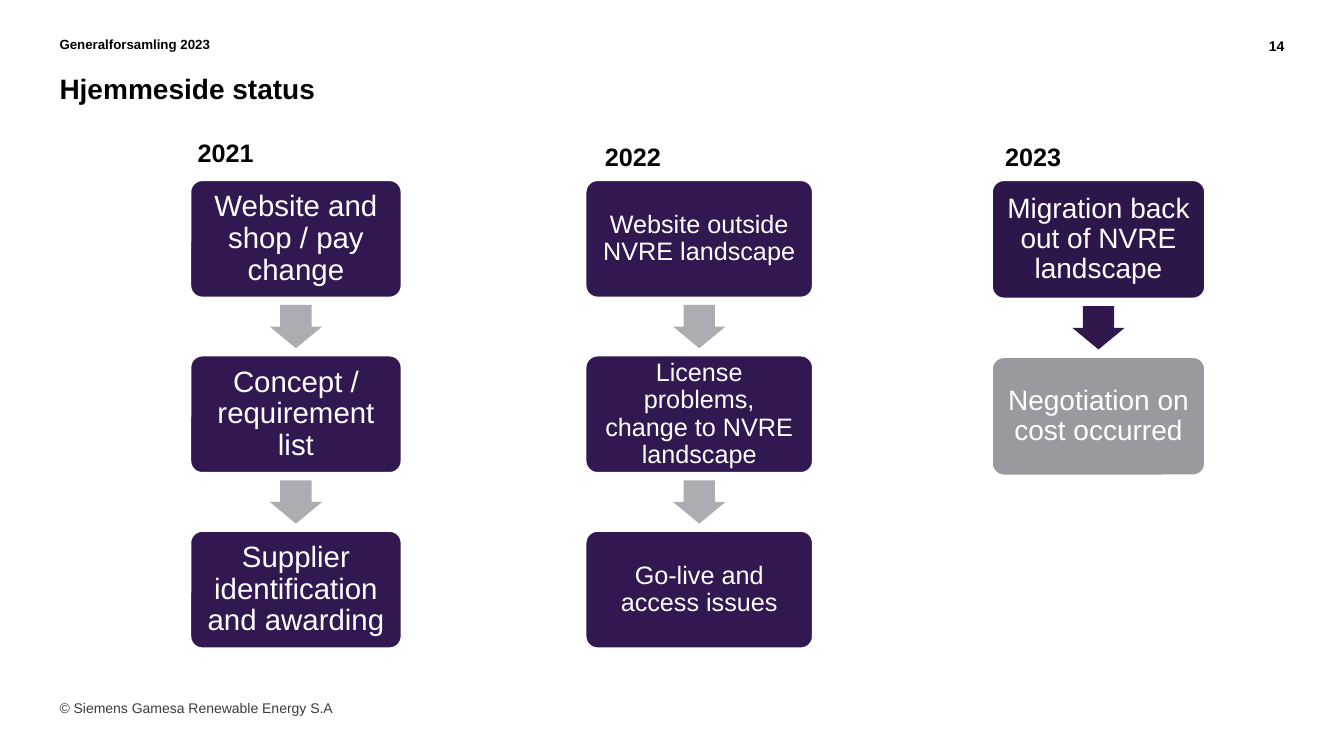
from pptx import Presentation
from pptx.dml.color import RGBColor
from pptx.enum.shapes import MSO_SHAPE as SHAPE
from pptx.enum.text import MSO_ANCHOR as ANCHOR, MSO_AUTO_SIZE as AUTO, PP_ALIGN as ALIGN
from pptx.util import Inches, Pt

BLACK = RGBColor(0x00, 0x00, 0x00)
WHITE = RGBColor(0xFF, 0xFF, 0xFF)
DARK_GREY = RGBColor(0x3C, 0x3C, 0x3C)
PURPLE = RGBColor(0x32, 0x18, 0x50)
DEEP_PURPLE = RGBColor(0x2D, 0x16, 0x49)
ARROW_PURPLE = RGBColor(0x30, 0x17, 0x4C)
ARROW_GREY = RGBColor(0xAE, 0xAC, 0xB3)
BOX_GREY = RGBColor(0x9B, 0x99, 0xA0)

TITLE = "Hjemmeside status"
LABELS = [
    ("Generalforsamling 2023", (0.59, 0.36, 9.25, 0.2), 9.5, True, BLACK, ALIGN.LEFT),
    ("14", (12.06, 0.37, 0.68, 0.24), 10, True, BLACK, ALIGN.RIGHT),
    ("© Siemens Gamesa Renewable Energy S.A", (0.59, 6.94, 3.02, 0.17), 10, False,
     DARK_GREY, ALIGN.LEFT),
]
YEARS = [
    dict(year="2021", year_at=(1.96, 1.36), left=1.89, width=2.09, height=1.16,
         size=21, inset=0.12, arrow=ARROW_GREY,
         steps=[("Website and shop / pay change", PURPLE),
                ("Concept / requirement list", PURPLE),
                ("Supplier identification and awarding", PURPLE)]),
    dict(year="2022", year_at=(6.0, 1.4), left=5.81, width=2.25, height=1.16,
         size=18, inset=0.1, arrow=ARROW_GREY,
         steps=[("Website outside NVRE landscape", PURPLE),
                ("License problems, change to NVRE landscape", PURPLE),
                ("Go-live and access issues", PURPLE)]),
    dict(year="2023", year_at=(9.97, 1.4), left=9.84, width=2.11, height=1.17,
         size=20, inset=0.11, arrow=ARROW_PURPLE,
         steps=[("Migration back out of NVRE landscape", DEEP_PURPLE),
                ("Negotiation on cost occurred", BOX_GREY)]),
]
TOP = 1.79
PITCH = 1.5
ARROW_W, ARROW_H = 0.52, 0.43


def write(shape, text, size, color, bold=False, align=ALIGN.LEFT, inset=0,
          anchor=ANCHOR.TOP, wrap=True):
    tf = shape.text_frame
    tf.text = text
    tf.word_wrap = wrap
    tf.auto_size = AUTO.NONE
    tf.vertical_anchor = anchor
    tf.margin_left = tf.margin_right = tf.margin_top = tf.margin_bottom = Inches(inset)
    p = tf.paragraphs[0]
    p.alignment = align
    font = p.runs[0].font
    font.name, font.size, font.bold = "Arial", Pt(size), bold
    font.color.rgb = color
    return p


def add_shape(s, kind, at, fill, adjustments):
    sp = s.shapes.add_shape(kind, *map(Inches, at))
    sp.shadow.inherit = False
    sp.fill.solid()
    sp.fill.fore_color.rgb = fill
    sp.line.fill.background()
    for i, value in enumerate(adjustments):
        sp.adjustments[i] = value
    return sp


def add_year(s, col):
    label = s.shapes.add_textbox(*map(Inches, (*col["year_at"], 0.56, 0.3)))
    write(label, col["year"], 18, BLACK, bold=True, wrap=False)
    left, width, height = col["left"], col["width"], col["height"]
    gap = height * (PITCH - 1)
    for i, (text, fill) in enumerate(col["steps"]):
        top = TOP + i * height * PITCH
        box = add_shape(s, SHAPE.ROUNDED_RECTANGLE, (left, top, width, height), fill, [0.1])
        box.line.color.rgb = WHITE
        box.line.width = Pt(1)
        p = write(box, text, col["size"], WHITE, align=ALIGN.CENTER,
                  inset=col["inset"], anchor=ANCHOR.MIDDLE)
        p.line_spacing = 0.9
        if i:
            at = (left + (width - ARROW_W) / 2, top - (gap + ARROW_H) / 2, ARROW_W, ARROW_H)
            add_shape(s, SHAPE.DOWN_ARROW, at, col["arrow"], [0.6, 0.5])


def main():
    """Build the website status slide."""
    prs = Presentation()
    prs.slide_width, prs.slide_height = Inches(13.33), Inches(7.5)
    s = prs.slides.add_slide(prs.slide_layouts[5])
    title = s.shapes.title
    title.left, title.top, title.width, title.height = map(Inches, (0.59, 0.71, 9.25, 0.34))
    write(title, TITLE, 20, BLACK, bold=True)
    for text, at, size, bold, color, align in LABELS:
        write(s.shapes.add_textbox(*map(Inches, at)), text, size, color, bold, align)
    for col in YEARS:
        add_year(s, col)
    prs.save("out.pptx")


if __name__ == "__main__":
    main()
